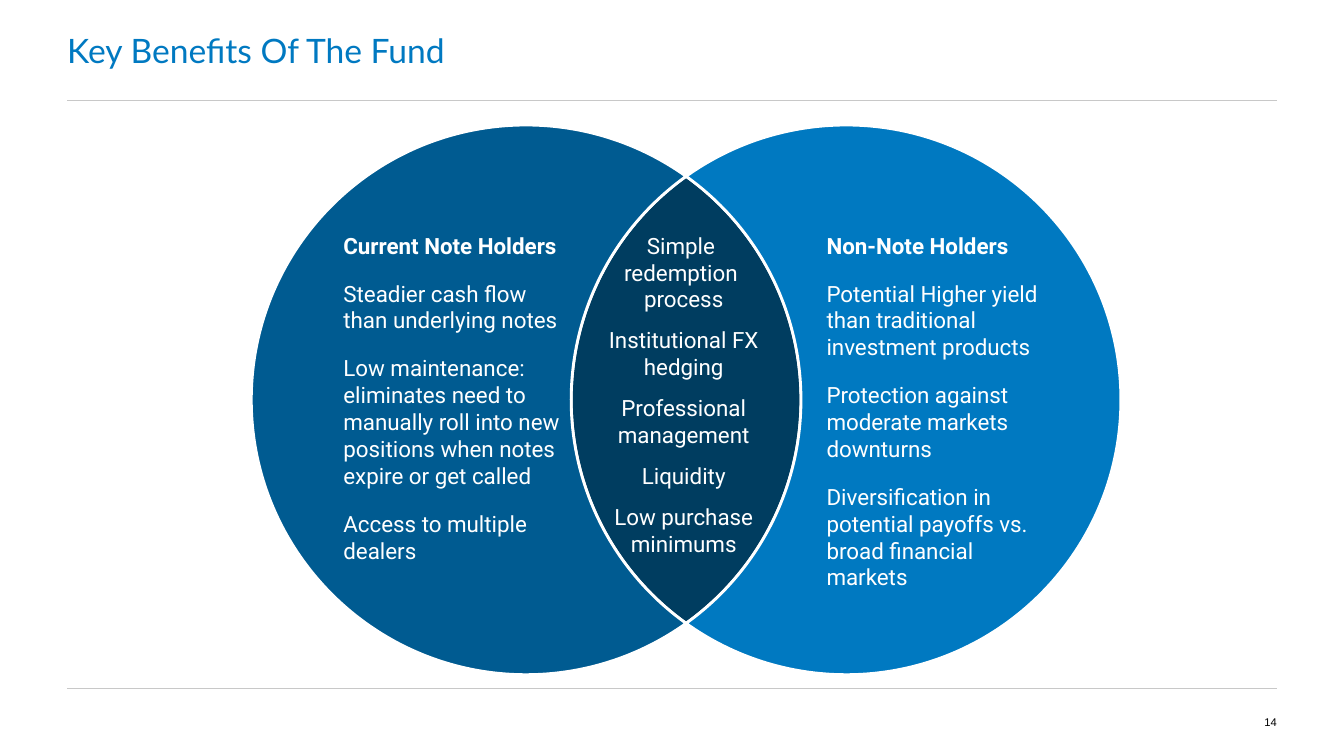
"""Build the fund benefits slide: two overlapping audiences with shared benefits."""
import itertools
import math

import lxml.etree
import pptx
import pptx.dml.color
import pptx.enum.shapes
import pptx.enum.text
import pptx.oxml.ns
import pptx.util

COLUMNS, ROWS = 20, 11.25
CELL = pptx.util.Inches(13.333) / COLUMNS
MIDDLE_X, MIDDLE_Y = 10.21, 5.95
RADIUS, CENTRE_OFFSET = 4.09, 2.38
CROSSING = math.degrees(math.acos(CENTRE_OFFSET / RADIUS))
TEXT_TOP, TEXT_HEIGHT = 3.45, 6.59

HOLDER_BENEFITS = [
    "Current Note Holders",
    "Steadier cash flow than underlying notes",
    "Low maintenance: eliminates need to manually roll into new positions "
    "when notes expire or get called",
    "Access to multiple dealers",
]
NEWCOMER_BENEFITS = [
    "Non-Note Holders",
    "Potential Higher yield than traditional investment products",
    "Protection against moderate markets downturns",
    "Diversification in potential payoffs vs. broad financial \vmarkets",
]
SHARED_BENEFITS = [
    "Simple \vredemption \vprocess",
    "Institutional FX hedging",
    "Professional management",
    "Liquidity",
    "Low purchase minimums",
]


def grid(cells):
    """Convert grid cells to a length."""
    return pptx.util.Emu(round(cells * CELL))


def colour(value):
    """Turn a hex string into a colour."""
    return pptx.dml.color.RGBColor.from_string(value)


def format_paragraph(paragraph, font, size, hex_colour, align, bold=False):
    """Apply alignment and font to a paragraph's runs."""
    paragraph.alignment = align
    for run in paragraph.runs:
        run.font.name = font
        run.font.size = pptx.util.Pt(size)
        run.font.bold = bold
        run.font.color.rgb = colour(hex_colour)


def prepare_frame(frame, anchor):
    """Give a text frame wrapping, an anchor and no insets."""
    frame.word_wrap = True
    frame.vertical_anchor = anchor
    frame.margin_left = frame.margin_right = 0
    frame.margin_top = frame.margin_bottom = 0


def add_rule(slide, row):
    """Draw a thin rule between the side margins."""
    rule = slide.shapes.add_connector(
        pptx.enum.shapes.MSO_CONNECTOR.STRAIGHT,
        grid(1), grid(row), grid(COLUMNS - 1), grid(row))
    rule.line.color.rgb = colour("C8C8C8")
    rule.line.width = pptx.util.Pt(0.75)
    lxml.etree.SubElement(rule._element.spPr, pptx.oxml.ns.qn("a:effectLst"))


def set_title(slide, text):
    """Place and format the title."""
    title = slide.shapes.title
    title.left, title.top = grid(1), grid(0)
    title.width, title.height = grid(COLUMNS - 1), grid(1.5)
    title.text_frame.text = text
    prepare_frame(title.text_frame, pptx.enum.text.MSO_ANCHOR.MIDDLE)
    format_paragraph(title.text_frame.paragraphs[0], "Lato", 24, "0079C1",
                     pptx.enum.text.PP_ALIGN.LEFT)


def arc(side, start, end):
    """List Bezier curves along the left (-1) or right (1) circle, in degrees."""
    low, high = sorted((start, end))
    quarters = [90 * i for i in range(-4, 9) if low < 90 * i < high]
    stops = sorted([start, *quarters, end], reverse=start > end)
    centre = MIDDLE_X + side * CENTRE_OFFSET

    def place(angle, pull):
        """Give a point on the circle, moved along its tangent by pull."""
        x, y = math.cos(angle), math.sin(angle)
        return (grid(centre + RADIUS * (x - pull * y)),
                grid(MIDDLE_Y + RADIUS * (y + pull * x)))

    curves = []
    for first, last in itertools.pairwise(map(math.radians, stops)):
        pull = 4 / 3 * math.tan((last - first) / 4)
        curves.append((place(first, 0), place(first, pull),
                       place(last, -pull), place(last, 0)))
    return curves


def add_region(slide, curves, fill):
    """Draw one closed region of the Venn diagram."""
    builder = slide.shapes.build_freeform(*curves[0][0])
    builder.add_line_segments([curve[-1] for curve in curves], close=True)
    region = builder.convert_to_shape()
    qn = pptx.oxml.ns.qn
    sides = list(region._element.iter(qn("a:lnTo")))
    for side, curve in zip(sides, curves):
        bend = lxml.etree.Element(qn("a:cubicBezTo"))
        for x, y in curve[1:]:
            lxml.etree.SubElement(bend, qn("a:pt"), x=str(x - region.left),
                                  y=str(y - region.top))
        side.getparent().replace(side, bend)
    region.shadow.inherit = False
    region.fill.solid()
    region.fill.fore_color.rgb = colour(fill)
    region.line.color.rgb = colour("FFFFFF")
    region.line.width = pptx.util.Pt(2)


def add_venn(slide):
    """Draw the overlap and the two crescents beside it."""
    a = CROSSING
    add_region(slide, arc(-1, -a, a) + arc(1, 180 - a, 180 + a), "003D60")
    add_region(slide, arc(-1, a, 360 - a) + arc(1, 180 + a, 180 - a), "005B91")
    add_region(slide, arc(1, 180 + a, 540 - a) + arc(-1, a, -a), "0079C1")


def add_benefits(slide, left, width, benefits, align, gap, headed):
    """Write a list of benefits, with a bold first line if headed."""
    box = slide.shapes.add_textbox(
        grid(left), grid(TEXT_TOP), grid(width), grid(TEXT_HEIGHT))
    prepare_frame(box.text_frame, pptx.enum.text.MSO_ANCHOR.TOP)
    box.text_frame.text = "\n".join(benefits)
    for index, paragraph in enumerate(box.text_frame.paragraphs):
        paragraph.space_after = pptx.util.Pt(gap)
        format_paragraph(paragraph, "Roboto", 16, "FFFFFF", align,
                         bold=headed and index == 0)


def add_page_number(slide, number):
    """Write the page number in the bottom right corner."""
    box = slide.shapes.add_textbox(
        grid(COLUMNS - 2), grid(ROWS - 1), grid(1), grid(1))
    prepare_frame(box.text_frame, pptx.enum.text.MSO_ANCHOR.MIDDLE)
    box.text_frame.text = number
    format_paragraph(box.text_frame.paragraphs[0], "Arial", 8, "000000",
                     pptx.enum.text.PP_ALIGN.RIGHT)


def main():
    """Build and save the slide."""
    deck = pptx.Presentation()
    deck.slide_width, deck.slide_height = grid(COLUMNS), grid(ROWS)
    slide = deck.slides.add_slide(deck.slide_layouts[5])
    align = pptx.enum.text.PP_ALIGN
    for row in (1.5, ROWS - 1):
        add_rule(slide, row)
    set_title(slide, "Key Benefits Of The Fund")
    add_venn(slide)
    add_page_number(slide, "14")
    add_benefits(slide, 5.11, 3.33, HOLDER_BENEFITS, align.LEFT, 15, True)
    add_benefits(slide, 12.3, 3.59, NEWCOMER_BENEFITS, align.LEFT, 15, True)
    add_benefits(slide, 8.74, 2.87, SHARED_BENEFITS, align.CENTER, 10, False)
    deck.save("out.pptx")


if __name__ == "__main__":
    main()
